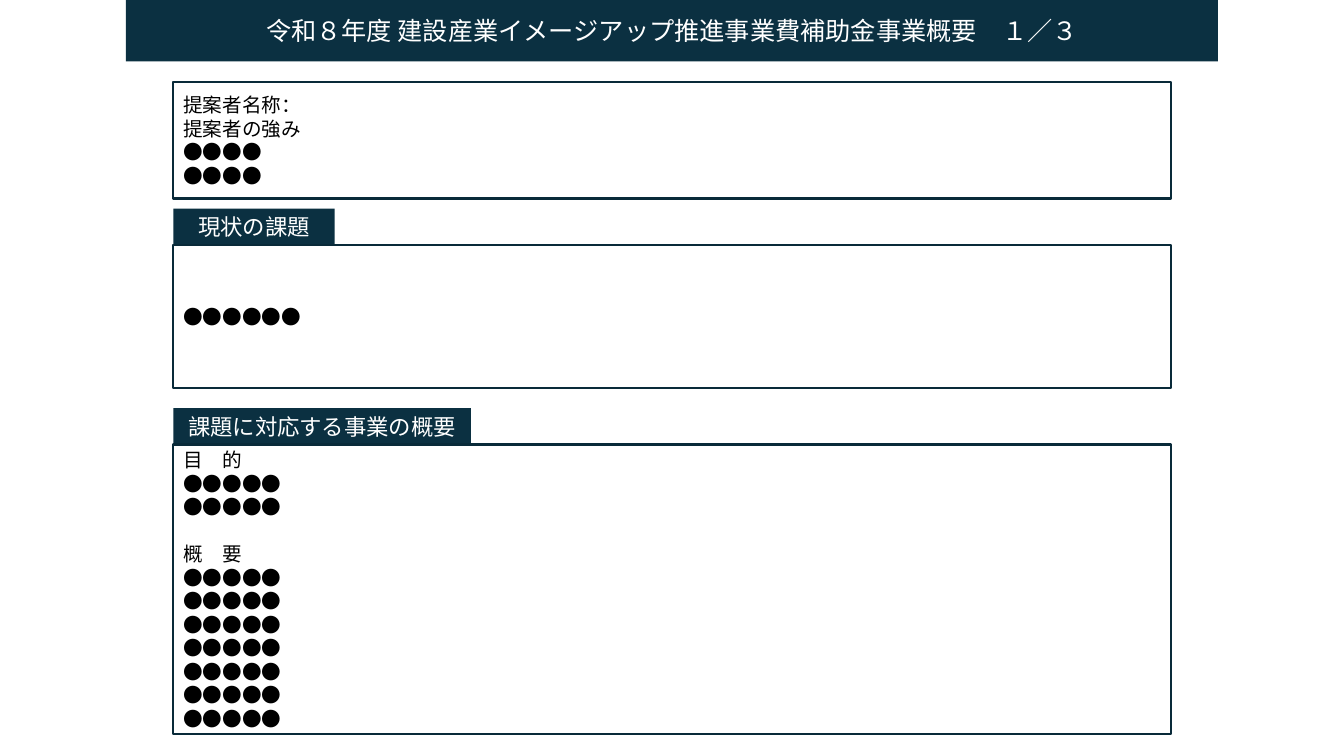
from pptx import Presentation
from pptx.dml.color import RGBColor
from pptx.enum.shapes import MSO_SHAPE
from pptx.enum.text import MSO_ANCHOR, PP_ALIGN
from pptx.oxml.ns import qn
from pptx.util import Inches, Pt
from lxml.etree import SubElement

# Content
TITLE = "令和８年度 建設産業イメージアップ推進事業費補助金事業概要　１／３"
PROPOSER = ["提案者名称：", "提案者の強み", "●●●●", "●●●●"]
ISSUES = ["●●●●●●"]
OUTLINE = ["目　的"] + ["●●●●●"] * 2 + ["概　要"] + ["●●●●●"] * 7
GAP_BEFORE = {"概　要"}

# Each section: heading, heading width, lines, box top, box height
SECTIONS = [
    (None, 0, PROPOSER, 0.81, 1.16),
    ("現状の課題", 1.6, ISSUES, 2.43, 1.42),
    ("課題に対応する事業の概要", 2.95, OUTLINE, 4.41, 2.87),
]

# Style and grid, lengths in inches
COLORS = {"band": "0B3041", "border": "092A39", "paper": "FFFFFF", "ink": "000000"}
FONT = "Noto Sans CJK JP"
SLIDE_W, SLIDE_H = 13.33, 7.5
TITLE_W, TITLE_H = 10.83, 0.61
BOX_W = 9.89
HEADING_H = 0.36
LEFT = (SLIDE_W - BOX_W) / 2
LINE_PITCH = Pt(16.8)


def color(name):
    return RGBColor.from_string(COLORS[name])


def add_panel(left, top, width, height, lines, size, fill, ink, border=None):
    panel = slide.shapes.add_shape(
        MSO_SHAPE.RECTANGLE, *map(Inches, (left, top, width, height)))
    panel.shadow.inherit = False
    panel.fill.solid()
    panel.fill.fore_color.rgb = color(fill)
    if border:
        panel.line.color.rgb = color(border)
        panel.line.width = Pt(1.5)
    else:
        panel.line.fill.background()

    frame = panel.text_frame
    frame.word_wrap = True
    frame.vertical_anchor = MSO_ANCHOR.MIDDLE
    for number, line in enumerate(lines):
        paragraph = frame.add_paragraph() if number else frame.paragraphs[0]
        paragraph.text = line
        paragraph.alignment = PP_ALIGN.LEFT if border else PP_ALIGN.CENTER
        if border:
            paragraph.line_spacing = LINE_PITCH
        if line in GAP_BEFORE:
            paragraph.space_before = LINE_PITCH
        font = paragraph.font
        font.size = Pt(size)
        font.color.rgb = color(ink)
        font.name = FONT
        # East Asian typeface follows the Latin one
        SubElement(font._element, qn("a:ea"), typeface=FONT)


prs = Presentation()
prs.slide_width, prs.slide_height = Inches(SLIDE_W), Inches(SLIDE_H)
slide = prs.slides.add_slide(prs.slide_layouts[6])

# Title band
add_panel((SLIDE_W - TITLE_W) / 2, 0, TITLE_W, TITLE_H, [TITLE], 18, "band", "paper")

# Sections: heading tab resting on its box
for heading, heading_w, lines, top, height in SECTIONS:
    if heading:
        add_panel(LEFT, top - HEADING_H, heading_w, HEADING_H,
                  [heading], 16, "band", "paper")
    add_panel(LEFT, top, BOX_W, height, lines, 14, "paper", "ink", "border")

prs.save("out.pptx")
